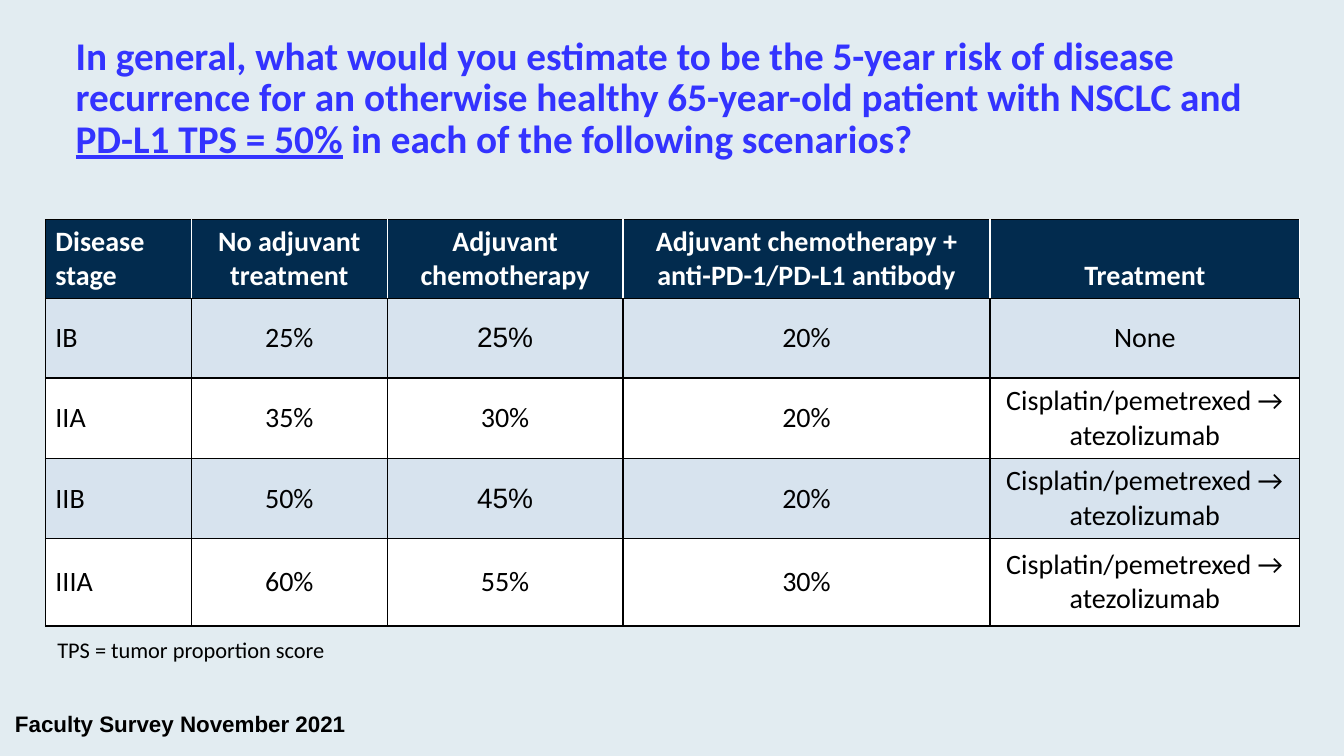
from lxml import etree
from pptx import Presentation
from pptx.dml.color import RGBColor
from pptx.enum.text import MSO_ANCHOR, MSO_AUTO_SIZE, PP_ALIGN
from pptx.oxml.ns import qn
from pptx.util import Inches, Pt

LEFT, CENTER = PP_ALIGN.LEFT, PP_ALIGN.CENTER
MIDDLE, BOTTOM = MSO_ANCHOR.MIDDLE, MSO_ANCHOR.BOTTOM
NO_AUTOFIT, GROW = MSO_AUTO_SIZE.NONE, MSO_AUTO_SIZE.SHAPE_TO_FIT_TEXT

BACKGROUND = RGBColor(0xE2, 0xEC, 0xF1)
TITLE_BLUE = RGBColor(0x33, 0x33, 0xFF)
HEADER_NAVY = RGBColor(0x02, 0x2B, 0x4E)
BAND_BLUE = RGBColor(0xD7, 0xE3, 0xEE)
WHITE = RGBColor(0xFF, 0xFF, 0xFF)
BLACK = RGBColor(0, 0, 0)

TITLE_RUNS = [
    ("In general, what would you estimate to be the 5-year risk of disease "
     "recurrence for an otherwise healthy 65-year-old patient with NSCLC and ", False),
    ("PD-L1 TPS = 50%", True),
    (" in each of the following scenarios?", False),
]
COMBINATION = "Cisplatin/pemetrexed → atezolizumab"
SURVEY_ROWS = [
    ("Disease stage", "No adjuvant treatment", "Adjuvant chemotherapy",
     "Adjuvant chemotherapy + anti-PD-1/PD-L1 antibody", "Treatment"),
    ("IB", "25%", "25%", "20%", "None"),
    ("IIA", "35%", "30%", "20%", COMBINATION),
    ("IIB", "50%", "45%", "20%", COMBINATION),
    ("IIIA", "60%", "55%", "30%", COMBINATION),
]
ARIAL_CELLS = {(1, 2), (3, 2)}
COLUMN_WIDTHS = [1.45, 1.94, 2.34, 3.64, 3.07]
ROW_HEIGHTS = [0.7, 0.79, 0.8, 0.79, 0.87]


def add_run(paragraph, text, size, color, font="Calibri", bold=False, underline=False):
    run = paragraph.add_run()
    run.text = text
    run.font.name = font
    run.font.size = Pt(size)
    run.font.bold = bold
    run.font.underline = underline
    run.font.color.rgb = color


def place_title(slide, left, top, width, height):
    title = slide.shapes.title
    title.left, title.top = Inches(left), Inches(top)
    title.width, title.height = Inches(width), Inches(height)
    frame = title.text_frame
    frame.auto_size = NO_AUTOFIT
    frame.word_wrap = True
    frame.vertical_anchor = MIDDLE
    frame.margin_left = frame.margin_right = frame.margin_top = frame.margin_bottom = 0
    paragraph = frame.paragraphs[0]
    paragraph.alignment = LEFT
    paragraph.line_spacing = 0.88
    for text, underline in TITLE_RUNS:
        add_run(paragraph, text, 28, TITLE_BLUE, bold=True, underline=underline)


def set_borders(cell, colors):
    """Draw 1 pt cell borders; colors are in the order left, right, top, bottom."""
    properties = cell._tc.get_or_add_tcPr()
    for side, color in zip("LRTB", colors):
        line = etree.SubElement(properties, qn(f"a:ln{side}"), w=str(Pt(1)))
        fill = etree.SubElement(line, qn("a:solidFill"))
        etree.SubElement(fill, qn("a:srgbClr"), val=str(color))


def fill_cell(cell, row, column, text):
    is_header = row == 0
    if is_header:
        left_border = BLACK if column == 0 else WHITE
        set_borders(cell, (left_border, WHITE, BLACK, BLACK))
        background = HEADER_NAVY
    else:
        set_borders(cell, [BLACK] * 4)
        background = BAND_BLUE if row % 2 else WHITE
    cell.fill.solid()
    cell.fill.fore_color.rgb = background
    cell.vertical_anchor = BOTTOM if is_header else MIDDLE
    paragraph = cell.text_frame.paragraphs[0]
    paragraph.alignment = LEFT if column == 0 else CENTER
    add_run(paragraph, text, 20, WHITE if is_header else BLACK,
            font="Arial" if (row, column) in ARIAL_CELLS else "Calibri", bold=is_header)


def add_survey_table(slide, left, top):
    table = slide.shapes.add_table(
        len(ROW_HEIGHTS), len(COLUMN_WIDTHS), Inches(left), Inches(top),
        Inches(sum(COLUMN_WIDTHS)), Inches(sum(ROW_HEIGHTS))).table
    for column, width in zip(table.columns, COLUMN_WIDTHS):
        column.width = Inches(width)
    for row, height in zip(table.rows, ROW_HEIGHTS):
        row.height = Inches(height)
    for row, texts in enumerate(SURVEY_ROWS):
        for column, text in enumerate(texts):
            fill_cell(table.cell(row, column), row, column, text)


def add_note(slide, left, top, width, height, text, font, bold=False):
    box = slide.shapes.add_textbox(Inches(left), Inches(top), Inches(width), Inches(height))
    box.text_frame.word_wrap = False
    box.text_frame.auto_size = GROW
    add_run(box.text_frame.paragraphs[0], text, 16, BLACK, font, bold)


def main():
    presentation = Presentation()
    presentation.slide_width, presentation.slide_height = Inches(13.33), Inches(7.5)
    slide = presentation.slides.add_slide(presentation.slide_layouts[5])
    slide.background.fill.solid()
    slide.background.fill.fore_color.rgb = BACKGROUND

    # Question, survey answers, source and abbreviation
    place_title(slide, 0.75, 0.36, 12.13, 1.25)
    add_survey_table(slide, 0.45, 2.18)
    add_note(slide, 0.05, 7, 3.49, 0.37, "Faculty Survey November 2021", "Arial", bold=True)
    add_note(slide, 0.47, 6.26, 2.89, 0.37, "TPS = tumor proportion score", "Calibri")

    presentation.save("out.pptx")


if __name__ == "__main__":
    main()
